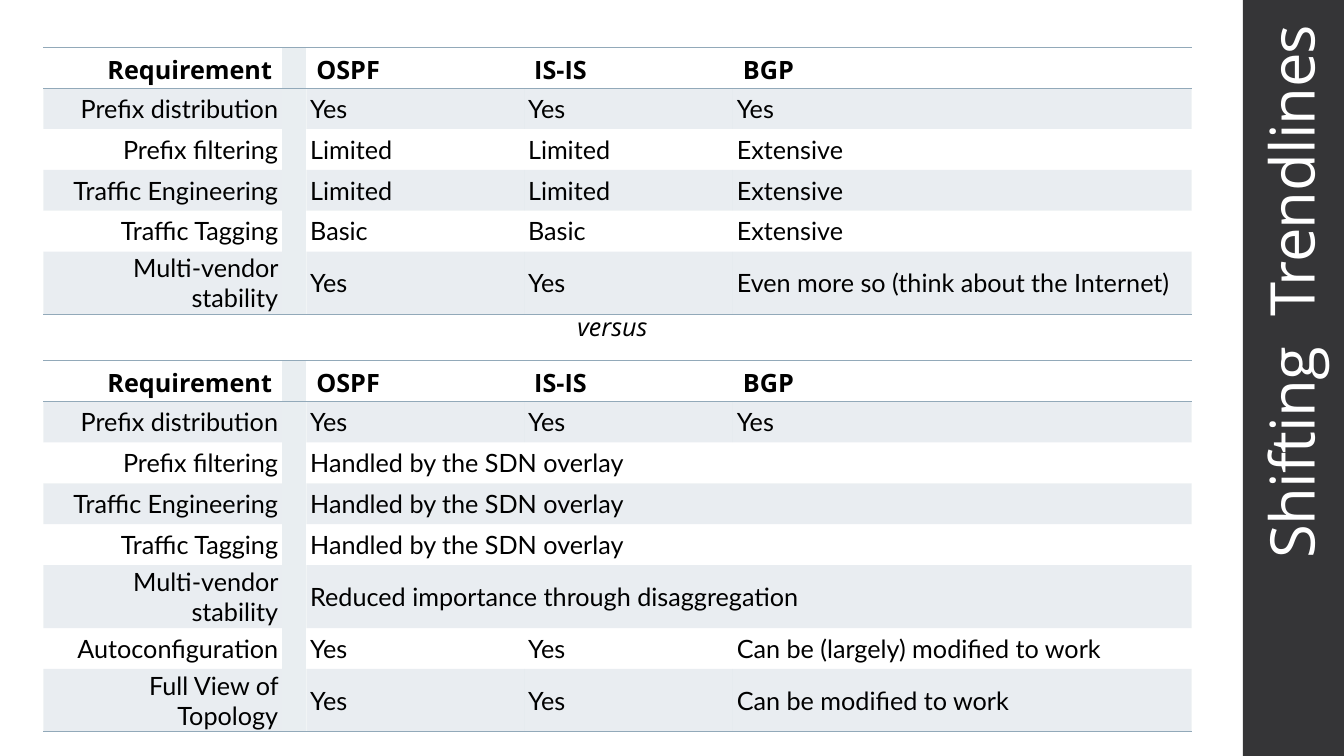
from lxml import etree
from pptx import Presentation
from pptx.dml.color import RGBColor
from pptx.enum.shapes import MSO_SHAPE
from pptx.enum.text import MSO_ANCHOR, MSO_AUTO_SIZE, PP_ALIGN
from pptx.oxml.ns import qn
from pptx.util import Cm, Pt

RECT = MSO_SHAPE.RECTANGLE
MIDDLE, BOTTOM = MSO_ANCHOR.MIDDLE, MSO_ANCHOR.BOTTOM
LEFT, RIGHT = PP_ALIGN.LEFT, PP_ALIGN.RIGHT

# Content: a row with two entries has its answer across all protocols
TITLE = "Shifting  Trendlines"
HEAD = ("Requirement", "OSPF", "IS-IS", "BGP")
NATIVE = [
    HEAD,
    ("Prefix distribution", "Yes", "Yes", "Yes"),
    ("Prefix filtering", "Limited", "Limited", "Extensive"),
    ("Traffic Engineering", "Limited", "Limited", "Extensive"),
    ("Traffic Tagging", "Basic", "Basic", "Extensive"),
    ("Multi-vendor stability", "Yes", "Yes",
     "Even more so (think about the Internet)"),
]
OVERLAY = [
    HEAD,
    ("Prefix distribution", "Yes", "Yes", "Yes"),
    ("Prefix filtering", "Handled by the SDN overlay"),
    ("Traffic Engineering", "Handled by the SDN overlay"),
    ("Traffic Tagging", "Handled by the SDN overlay"),
    ("Multi-vendor stability", "Reduced importance through disaggregation"),
    ("Autoconfiguration", "Yes", "Yes", "Can be (largely) modified to work"),
    ("Full View of Topology", "Yes", "Yes", "Can be modified to work"),
]
COLORS = {"bar": "353537", "title": "FFFFFF", "text": "000000",
          "rule": "92A9B9", "gap": "E9EEF1"}
HEAD_FONT, BODY_FONT = "Open Sans", "Lato"
COLS = (6.02, 0.58, 5.49, 5.26, 11.56)
GAP = 1
ROW = 1.03
PLAIN = "{2D5ABB26-0587-4C30-8999-92F81FD0307C}"


def paint(fill, name):
    fill.solid()
    fill.fore_color.rgb = RGBColor.from_string(COLORS[name])


def write(frame, text, font, size=18, color="text", align=LEFT,
          bold=False, italic=False):
    para = frame.paragraphs[0]
    para.alignment = align
    run = para.add_run()
    run.text = text
    run.font.name, run.font.size = font, Pt(size)
    run.font.bold, run.font.italic = bold, italic
    run.font.color.rgb = RGBColor.from_string(COLORS[color])
    return run


def add_rule(cell, side, at):
    line = etree.Element(qn("a:" + side), w=str(Pt(1)))
    fill = etree.SubElement(line, qn("a:solidFill"))
    etree.SubElement(fill, qn("a:srgbClr"), val=COLORS["rule"])
    cell._tc.get_or_add_tcPr().insert(at, line)


def shade(cell, col, row):
    if col == GAP:
        paint(cell.fill, "gap")
    elif row % 2:
        paint(cell.fill, "rule")
        tint = cell._tc.tcPr.find(".//" + qn("a:srgbClr"))
        etree.SubElement(tint, qn("a:alpha"), val="20000")
    else:
        cell.fill.background()


def add_grid(slide, rows, top):
    frame = slide.shapes.add_table(len(rows), len(COLS), Cm(1.09), Cm(top),
                                   Cm(sum(COLS)), Cm(ROW * len(rows)))
    table = frame.table
    table.first_row = table.horz_banding = False
    table._tbl.tblPr.find(qn("a:tableStyleId")).text = PLAIN
    for col, width in zip(table.columns, COLS):
        col.width = Cm(width)
    for r, words in enumerate(rows):
        table.rows[r].height = Cm(ROW)
        cells = [table.cell(r, c) for c in range(len(COLS))]
        # Shading and rules
        for c, cell in enumerate(cells):
            shade(cell, c, r)
            sides = ["lnT"] if r == 0 else []
            if r in (0, len(rows) - 1):
                sides.append("lnB")
            for at, side in enumerate(sides):
                add_rule(cell, side, at)
        if len(words) == 2:
            cells[GAP + 1].merge(cells[-1])
        # Words, skipping the gap column
        for word, cell in zip(words, cells[:GAP] + cells[GAP + 1:]):
            if r:
                cell.vertical_anchor = MIDDLE
                cell.margin_left = cell.margin_right = Cm(0.1)
                cell.margin_top = cell.margin_bottom = Cm(0.03)
            write(cell.text_frame, word, BODY_FONT if r else HEAD_FONT,
                  align=RIGHT if cell is cells[0] else LEFT, bold=r == 0)


def main():
    deck = Presentation()
    deck.slide_width, deck.slide_height = Cm(33.87), Cm(19.05)
    slide = deck.slides.add_slide(deck.slide_layouts[6])
    shapes = slide.shapes

    # Side bar with the upright title
    bar = shapes.add_shape(RECT, Cm(31.32), 0, Cm(2.55), Cm(19.05))
    bar.shadow.inherit = False
    paint(bar.fill, "bar")
    bar.line.fill.background()
    title = shapes.add_textbox(Cm(23.42), Cm(8.56), Cm(18.36), Cm(1.98))
    title.rotation = 270
    frame = title.text_frame
    frame.word_wrap, frame.vertical_anchor = True, BOTTOM
    frame.paragraphs[0].line_spacing = 0.9
    run = write(frame, TITLE, HEAD_FONT, 44, "title", RIGHT)
    run._r.get_or_add_rPr().set("spc", "-50")

    # The two tables and the word between them
    add_grid(slide, NATIVE, 1.19)
    add_grid(slide, OVERLAY, 9.09)
    versus = shapes.add_textbox(Cm(14.3), Cm(7.72), Cm(2.31), Cm(1.02))
    versus.text_frame.word_wrap = False
    versus.text_frame.auto_size = MSO_AUTO_SIZE.SHAPE_TO_FIT_TEXT
    write(versus.text_frame, "versus", HEAD_FONT, italic=True)

    deck.save("out.pptx")


if __name__ == "__main__":
    main()
